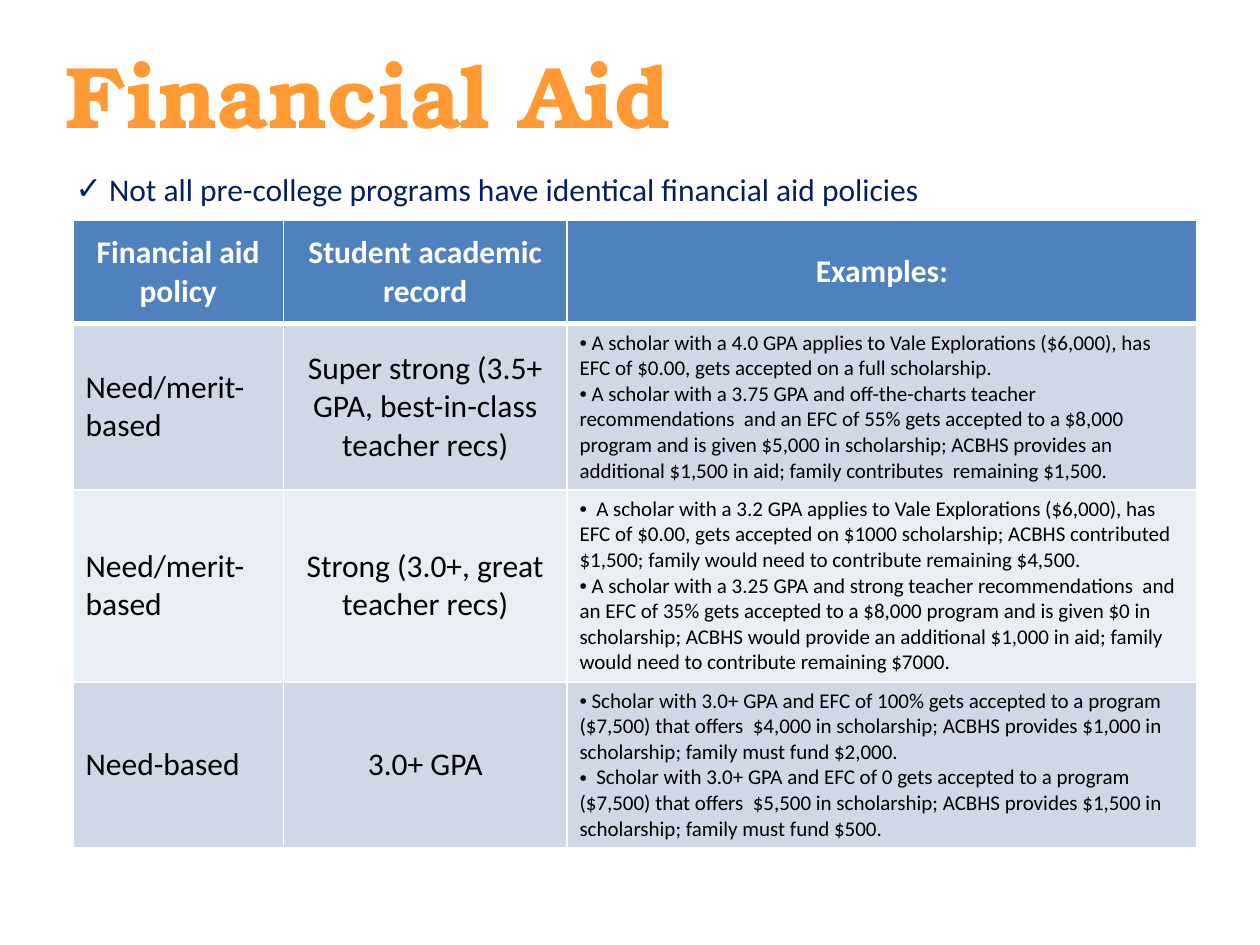
from lxml.etree import SubElement
from pptx import Presentation
from pptx.dml.color import RGBColor
from pptx.enum.text import MSO_ANCHOR as Anchor, MSO_AUTO_SIZE as AutoSize, PP_ALIGN as Align
from pptx.oxml.ns import qn
from pptx.util import Inches, Pt

ORANGE = RGBColor(0xFF, 0x99, 0x33)
NAVY = RGBColor(0x00, 0x20, 0x60)
BLUE = RGBColor(0x4F, 0x81, 0xBD)
PALE_BLUE = RGBColor(0xD0, 0xD8, 0xE8)
PALE_GREY = RGBColor(0xE9, 0xED, 0xF4)
WHITE = RGBColor(0xFF, 0xFF, 0xFF)
BLACK = RGBColor(0x00, 0x00, 0x00)


def write(frame, lines, size=18, color=BLACK, font="Calibri", bold=False,
          align=Align.LEFT, spacing=1.0, bullet=None, bullet_font="Arial"):
    for index, line in enumerate(lines):
        para = frame.paragraphs[0] if index == 0 else frame.add_paragraph()
        para.alignment = align
        para.line_spacing = spacing
        para.space_before = Pt(0)
        span = para.add_run()
        span.text = line
        span.font.size = Pt(size)
        span.font.name = font
        span.font.bold = bold
        span.font.color.rgb = color
        if bullet:
            props = para._p.get_or_add_pPr()
            props.set("marL", "0")
            props.set("indent", "0")
            SubElement(props, qn("a:buFont"), typeface=bullet_font)
            SubElement(props, qn("a:buChar"), char=bullet)


def add_borders(cell, widths):
    props = cell._tc.get_or_add_tcPr()
    for side, width in widths.items():
        line = SubElement(props, qn(f"a:ln{side}"), w=str(Pt(width)))
        fill = SubElement(line, qn("a:solidFill"))
        SubElement(fill, qn("a:srgbClr"), val=str(WHITE))


deck = Presentation()
deck.slide_width, deck.slide_height = Inches(10), Inches(7.5)
page = deck.slides.add_slide(deck.slide_layouts[1])

title = page.shapes.title
title.left, title.top = Inches(0.42), Inches(0.06)
title.width, title.height = Inches(9.58), Inches(1.36)
title.text_frame.auto_size = AutoSize.NONE
title.text_frame.vertical_anchor = Anchor.MIDDLE
write(title.text_frame, ["Financial Aid"], size=50, color=ORANGE,
      font="TeX Gyre Bonum", bold=True)

body = page.placeholders[1]
body.left, body.top = Inches(0.5), Inches(1)
body.width, body.height = Inches(8.83), Inches(0.62)
body.text_frame.auto_size = AutoSize.NONE
body.text_frame.vertical_anchor = Anchor.TOP
write(body.text_frame,
      [" Not all pre-college programs have identical financial aid policies"],
      color=NAVY, spacing=2.0, bullet="✓", bullet_font="Calibri")

headings = ["Financial aid policy", "Student academic record", "Examples:"]
policies = [
    ("Need/merit-based", "Super strong (3.5+ GPA, best-in-class teacher recs)", [
        " A scholar with a 4.0 GPA applies to Vale Explorations ($6,000), has EFC of "
        "$0.00, gets accepted on a full scholarship.",
        " A scholar with a 3.75 GPA and off-the-charts teacher recommendations  and an "
        "EFC of 55% gets accepted to a $8,000 program and is given $5,000 in "
        "scholarship; ACBHS provides an additional $1,500 in aid; family contributes  "
        "remaining $1,500.",
    ]),
    ("Need/merit-based", "Strong (3.0+, great teacher recs)", [
        "  A scholar with a 3.2 GPA applies to Vale Explorations ($6,000), has EFC of "
        "$0.00, gets accepted on $1000 scholarship; ACBHS contributed $1,500; family "
        "would need to contribute remaining $4,500.",
        " A scholar with a 3.25 GPA and strong teacher recommendations  and an EFC of "
        "35% gets accepted to a $8,000 program and is given $0 in scholarship; ACBHS "
        "would provide an additional $1,000 in aid; family would need to contribute "
        "remaining $7000.",
    ]),
    ("Need-based", "3.0+ GPA", [
        " Scholar with 3.0+ GPA and EFC of 100% gets accepted to a program ($7,500) "
        "that offers  $4,000 in scholarship; ACBHS provides $1,000 in scholarship; "
        "family must fund $2,000.",
        "  Scholar with 3.0+ GPA and EFC of 0 gets accepted to a program ($7,500) that "
        "offers  $5,500 in scholarship; ACBHS provides $1,500 in scholarship; family "
        "must fund $500.",
    ]),
]

table = page.shapes.add_table(len(policies) + 1, len(headings), Inches(0.58),
                              Inches(1.75), Inches(8.92), Inches(4.92)).table
for column, width in zip(table.columns, [1.67, 2.25, 5]):
    column.width = Inches(width)
for row, height in zip(table.rows, [0.82, 1.3, 1.5, 1.3]):
    row.height = Inches(height)

for row_index, row in enumerate(table.rows):
    for cell in row.cells:
        top = 3 if row_index == 1 else 1
        bottom = 3 if row_index == 0 else 1
        add_borders(cell, {"L": 1, "R": 1, "T": top, "B": bottom})
        cell.fill.solid()
        cell.fill.fore_color.rgb = (BLUE if row_index == 0
                                    else PALE_BLUE if row_index % 2 else PALE_GREY)
        cell.vertical_anchor = Anchor.MIDDLE

for cell, heading in zip(table.rows[0].cells, headings):
    write(cell.text_frame, [heading], color=WHITE, bold=True, align=Align.CENTER)

for row_index, (policy, record, examples) in enumerate(policies, start=1):
    write(table.cell(row_index, 0).text_frame, [policy])
    write(table.cell(row_index, 1).text_frame, [record], align=Align.CENTER)
    write(table.cell(row_index, 2).text_frame, examples, size=12, bullet="•")

deck.save("out.pptx")
